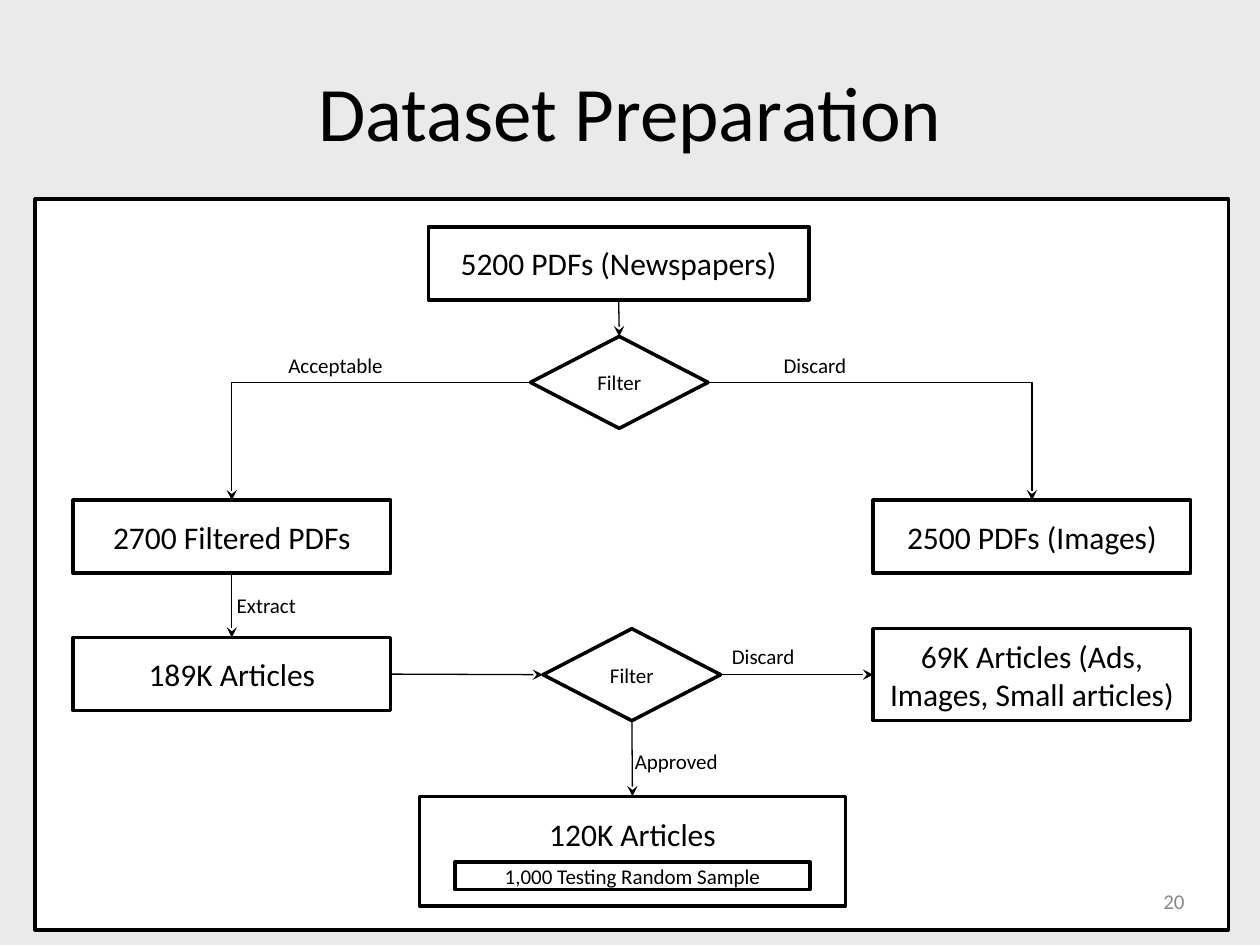
"""Build the Dataset Preparation flowchart slide."""
from lxml.etree import SubElement
from pptx import Presentation
from pptx.dml.color import RGBColor
from pptx.enum.shapes import MSO_CONNECTOR as Link, MSO_SHAPE as Shape
from pptx.enum.text import MSO_ANCHOR as Anchor, PP_ALIGN as Align
from pptx.oxml.ns import qn
from pptx.util import Inches, Pt

THEME = {
    "font": "Calibri",
    "ink": RGBColor.from_string("000000"),
    "paper": RGBColor.from_string("FFFFFF"),
    "back": RGBColor.from_string("EAEAEA"),
    "muted": RGBColor.from_string("888888"),
    "title": 44, "body": 18, "small": 12,
    "outline": 2, "arrow": 0.75,
}
TITLE = ("Dataset Preparation", (0.5, 0.3, 9, 1.25))
TOP, LEFT, BOTTOM, RIGHT = range(4)

BOXES = {
    "frame": (Shape.RECTANGLE, (0.28, 1.58, 9.47, 5.8), "", "body"),
    "newspapers": (Shape.RECTANGLE, (3.4, 1.8, 3.02, 0.58), "5200 PDFs (Newspapers)", "body"),
    "pdf filter": (Shape.DIAMOND, (4.21, 2.67, 1.41, 0.73), "Filter", "small"),
    "filtered": (Shape.RECTANGLE, (0.58, 3.97, 2.52, 0.58), "2700 Filtered PDFs", "body"),
    "images": (Shape.RECTANGLE, (6.93, 3.97, 2.52, 0.58), "2500 PDFs (Images)", "body"),
    "articles": (Shape.RECTANGLE, (0.58, 5.06, 2.52, 0.58), "189K Articles", "body"),
    "article filter": (Shape.DIAMOND, (4.31, 4.99, 1.41, 0.73), "Filter", "small"),
    "rejected": (Shape.RECTANGLE, (6.93, 4.99, 2.52, 0.73),
                 "69K Articles (Ads, Images, Small articles)", "body"),
    "approved": (Shape.RECTANGLE, (3.33, 6.32, 3.38, 0.87), "", "body"),
    "sample": (Shape.RECTANGLE, (3.61, 6.84, 2.82, 0.22), "1,000 Testing Random Sample", "small"),
}
ARROWS = [
    ("newspapers", BOTTOM, "pdf filter", TOP),
    ("pdf filter", LEFT, "filtered", TOP),
    ("pdf filter", RIGHT, "images", TOP),
    ("filtered", BOTTOM, "articles", TOP),
    ("articles", RIGHT, "article filter", LEFT),
    ("article filter", RIGHT, "rejected", LEFT),
    ("article filter", BOTTOM, "approved", TOP),
]
LABELS = [
    ("120K Articles", (3.61, 6.42, 2.82, 0.35), "body", "ink", Align.CENTER, Anchor.TOP),
    ("Discard", (6.12, 2.75, 2.12, 0.32), "small", "ink", Align.LEFT, Anchor.TOP),
    ("Acceptable", (2.19, 2.75, 1.61, 0.26), "small", "ink", Align.LEFT, Anchor.TOP),
    ("Extract", (1.78, 4.65, 0.82, 0.26), "small", "ink", Align.LEFT, Anchor.TOP),
    ("Discard", (5.71, 5.06, 2.12, 0.26), "small", "ink", Align.LEFT, Anchor.TOP),
    ("Approved", (4.94, 5.89, 2.12, 0.26), "small", "ink", Align.LEFT, Anchor.TOP),
    ("20", (7.17, 6.95, 2.33, 0.4), "small", "muted", Align.RIGHT, Anchor.MIDDLE),
]


def write(shape, text, size, color="ink", align=Align.CENTER, anchor=Anchor.MIDDLE):
    frame = shape.text_frame
    frame.word_wrap = True
    frame.vertical_anchor = anchor
    para = frame.paragraphs[0]
    para.alignment = align
    span = para.add_run()
    span.text = text
    looks = {"name": THEME["font"], "size": Pt(THEME[size])}
    for name, value in looks.items():
        setattr(span.font, name, value)
    span.font.color.rgb = THEME[color]
    return para


def add_box(page, kind, place, text, size):
    box = page.shapes.add_shape(kind, *map(Inches, place))
    box.shadow.inherit = False
    box.fill.solid()
    box.fill.fore_color.rgb = THEME["paper"]
    box.line.color.rgb = THEME["ink"]
    box.line.width = Pt(THEME["outline"])
    if text:
        write(box, text, size)
    return box


def add_arrow(page, start, start_side, end, end_side):
    bent = start_side in (LEFT, RIGHT) and end_side == TOP
    arrow = page.shapes.add_connector(Link.ELBOW if bent else Link.STRAIGHT, 0, 0, 0, 0)
    arrow.begin_connect(start, start_side)
    arrow.end_connect(end, end_side)
    arrow.line.color.rgb = THEME["ink"]
    arrow.line.width = Pt(THEME["arrow"])
    properties = arrow.element.spPr
    if bent:
        properties.find(qn("a:prstGeom")).set("prst", "bentConnector2")
    SubElement(properties.find(qn("a:ln")), qn("a:tailEnd"), type="stealth")
    SubElement(properties, qn("a:effectLst"))


def main():
    deck = Presentation()
    deck.slide_width, deck.slide_height = Inches(10), Inches(7.5)
    page = deck.slides.add_slide(deck.slide_layouts[5])
    page.background.fill.solid()
    page.background.fill.fore_color.rgb = THEME["back"]

    heading, place = TITLE
    title = page.shapes.title
    for name, value in zip(("left", "top", "width", "height"), place):
        setattr(title, name, Inches(value))
    write(title, heading, "title").line_spacing = 0.9

    boxes = {name: add_box(page, *box) for name, box in BOXES.items()}
    for start, start_side, end, end_side in ARROWS:
        add_arrow(page, boxes[start], start_side, boxes[end], end_side)
    for text, place, *style in LABELS:
        write(page.shapes.add_textbox(*map(Inches, place)), text, *style)
    deck.save("out.pptx")


if __name__ == "__main__":
    main()
